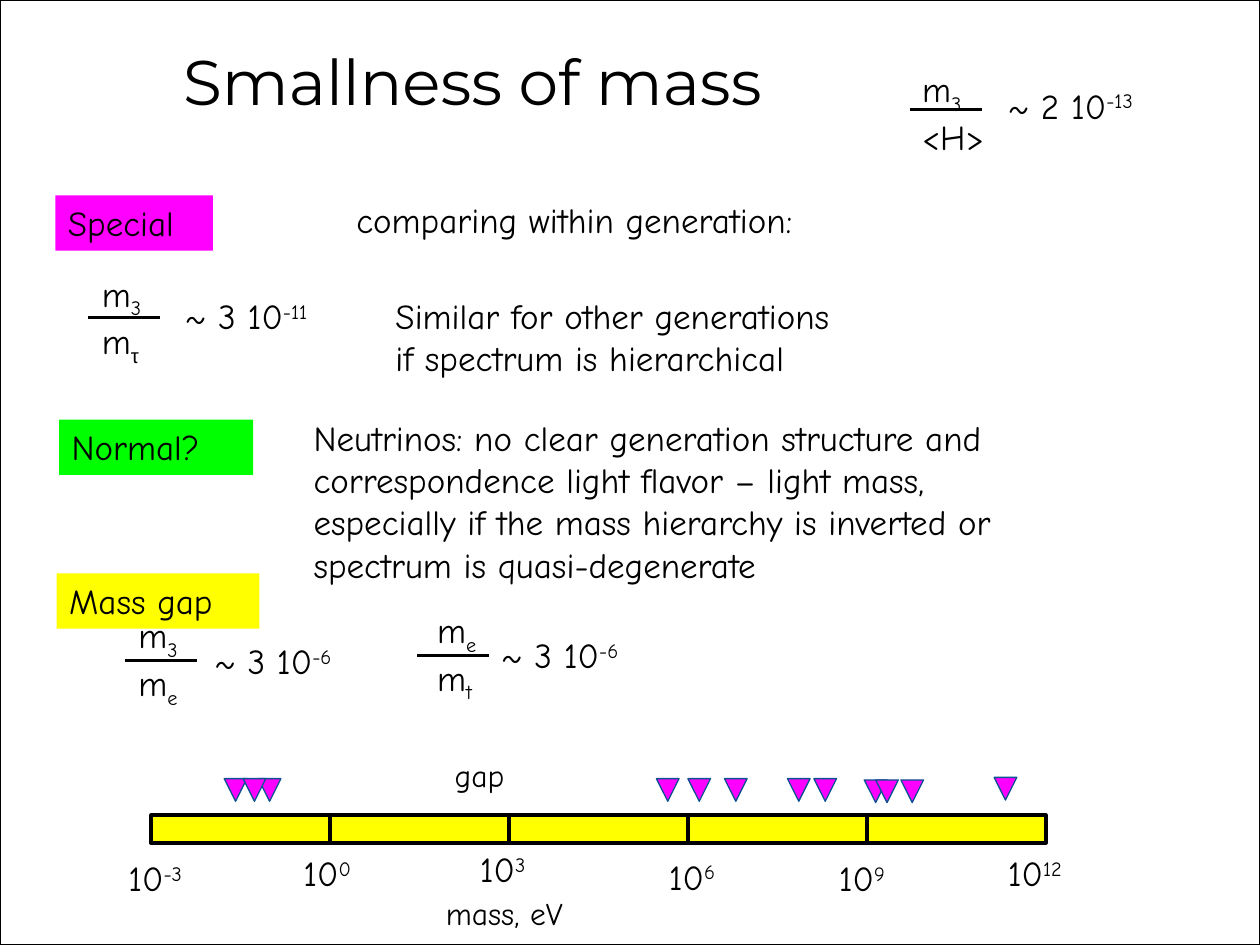
from typing import NamedTuple

from lxml.etree import SubElement
from pptx import Presentation
from pptx.dml.color import RGBColor
from pptx.enum.shapes import MSO_CONNECTOR, MSO_SHAPE
from pptx.enum.text import MSO_ANCHOR, PP_ALIGN
from pptx.oxml.ns import qn
from pptx.util import Emu, Inches, Pt

COLS, ROWS = 100, 75
WIDTH, HEIGHT = Inches(10), Inches(7.5)
BLACK, WHITE, MAGENTA, GREEN, YELLOW = "000000", "FFFFFF", "FF00FF", "00FF00", "FFFF00"
SCRIPTS = {"_": -25000, "^": 30000}


class Box(NamedTuple):
    """A place on the grid, in columns and rows."""
    x: float
    y: float
    w: float
    h: float


class Note(NamedTuple):
    """Lines of text, where _ starts a subscript and ^ a superscript."""
    box: Box
    lines: tuple
    size: int = 20


class Label(NamedTuple):
    """A heading on a coloured block."""
    box: Box
    word: str
    fill: str


class Ratio(NamedTuple):
    """A fraction with its bar and its approximate value."""
    terms: Box
    top: str
    bottom: str
    bar_x: float
    bar_y: float
    value_x: float
    value_y: float
    value: str


class Tick(NamedTuple):
    """A power of ten below the mass scale."""
    x: float
    y: float
    w: float
    power: str


LABELS = [
    Label(Box(4.4, 15.5, 12.5, 4.4), "Special", MAGENTA),
    Label(Box(4.7, 33.3, 15.4, 4.4), "Normal?", GREEN),
    Label(Box(4.5, 45.5, 16.1, 4.4), "Mass gap", YELLOW),
]
NOTES = [
    Note(Box(27.3, 15.3, 40.3, 4.4), ("comparing within generation:",)),
    Note(Box(30.4, 22.9, 41.8, 7.7),
         ("Similar for other generations", "if spectrum is hierarchical")),
    Note(Box(23.9, 32.6, 61.4, 14.5),
         ("Neutrinos: no clear generation structure and correspondence light flavor – "
          "light mass, especially if the mass hierarchy is inverted or spectrum is "
          "quasi-degenerate",)),
    Note(Box(35.1, 59.5, 7.4, 4), ("gap",), 18),
    Note(Box(34.4, 70.5, 18.8, 4), ("mass, eV",), 18),
]
RATIOS = [
    Ratio(Box(72.2, 4.9, 10.8, 7.7), "m_3", "<H>", 72.2, 8.7, 79, 6.2, "~ 2 10^-13"),
    Ratio(Box(7.1, 21.1, 5.8, 7.7), "m_3", "m_τ", 7, 25.2, 13.7, 22.9, "~ 3 10^-11"),
    Ratio(Box(10, 48.2, 5.8, 7.7), "m_3", "m_e", 9.9, 52.4, 15.1, 50.3, " ~ 3 10^-6"),
    Ratio(Box(33.7, 47.8, 5.8, 7.7), "m_e", "m_t", 33.1, 52, 38.8, 49.8, "~ 3 10^-6"),
]
TICKS = [
    Tick(9.2, 67.5, 7.6, "-3"), Tick(23.1, 67.1, 6.6, "0"), Tick(37.1, 66.8, 6.6, "3"),
    Tick(52.1, 67.4, 6.6, "6"), Tick(65.6, 67.5, 6.6, "9"), Tick(79, 67.1, 8.1, "12"),
]
SCALE = Box(12, 64.7, 14.2, 2.2)
MARKERS = {
    61.8: (20.5, 52.1, 17.8, 62.5, 54.6, 57.5, 64.6, 19.3),
    61.9: (68.6, 69.5, 71.5),
    61.7: (78.9,),
}


def rgb(value: str) -> RGBColor:
    """Turn a hex string into a colour."""
    return RGBColor.from_string(value)


def col(n: float) -> Emu:
    """Length of n grid columns."""
    return Emu(round(WIDTH * n / COLS))


def row(n: float) -> Emu:
    """Length of n grid rows."""
    return Emu(round(HEIGHT * n / ROWS))


def place(box: Box) -> tuple:
    """Left, top, width and height of a box."""
    return col(box.x), row(box.y), col(box.w), row(box.h)


def add_run(p, text: str, size: int, font: str, base: int = 0):
    """Add one run, raised or lowered by base."""
    r = p.add_run()
    r.text = text
    for key, value in {"size": Pt(size), "name": font}.items():
        setattr(r.font, key, value)
    r.font.color.rgb = rgb(BLACK)
    if base:
        r._r.get_or_add_rPr().set("baseline", str(base))
    return r


def write(tf, lines: tuple, size: int = 20) -> None:
    """Fill a text frame with left-aligned lines."""
    for key, value in {"word_wrap": True, "vertical_anchor": MSO_ANCHOR.TOP}.items():
        setattr(tf, key, value)
    for i, line in enumerate(lines):
        p = tf.add_paragraph() if i else tf.paragraphs[0]
        p.alignment = PP_ALIGN.LEFT
        mark = next((m for m in SCRIPTS if m in line), None)
        body, _, script = line.partition(mark) if mark else (line, "", "")
        add_run(p, body, size, "Comic Neue")
        if script:
            font = "Arial" if script == "τ" else "Comic Neue"
            add_run(p, script, size, font, SCRIPTS[mark])


def add_note(s, note: Note) -> None:
    """Draw a text box."""
    write(s.shapes.add_textbox(*place(note.box)).text_frame, note.lines, note.size)


def add_block(s, kind, box: Box, fill: str, line: str = "", width: float = 0.75):
    """Draw a filled preset shape, outlined if a line colour is given."""
    sp = s.shapes.add_shape(kind, *place(box))
    sp.shadow.inherit = False
    sp.fill.solid()
    sp.fill.fore_color.rgb = rgb(fill)
    if line:
        sp.line.color.rgb = rgb(line)
        sp.line.width = Pt(width)
    else:
        sp.line.fill.background()
    return sp


def add_title(s, text: str) -> None:
    """Draw the centred slide title."""
    tf = s.shapes.add_textbox(*place(Box(9.5, 2.2, 56, 8.4))).text_frame
    tf.word_wrap = False
    tf.vertical_anchor = MSO_ANCHOR.MIDDLE
    tf.paragraphs[0].alignment = PP_ALIGN.CENTER
    add_run(tf.paragraphs[0], text, 36, "Montserrat")


def add_ratio(s, q: Ratio) -> None:
    """Draw a fraction, its bar and its value."""
    add_note(s, Note(q.terms, (q.top, q.bottom)))
    y = row(q.bar_y)
    bar = s.shapes.add_connector(MSO_CONNECTOR.STRAIGHT, col(q.bar_x), y, col(q.bar_x + 5.7), y)
    bar.line.color.rgb = rgb(BLACK)
    bar.line.width = Pt(1.5)
    SubElement(bar._element.spPr, qn("a:effectLst"))
    add_note(s, Note(Box(q.value_x, q.value_y, 13.3, 4.4), (q.value,)))


def add_marker(s, x: float, y: float) -> None:
    """Draw a triangle pointing down at the scale."""
    sp = add_block(s, MSO_SHAPE.ISOSCELES_TRIANGLE, Box(x, y, 1.8, 1.8), MAGENTA, "0B5292")
    for key in ("flipH", "flipV"):
        sp._element.spPr.get_or_add_xfrm().set(key, "1")


def main() -> None:
    """Build and save the slide."""
    prs = Presentation()
    prs.slide_width, prs.slide_height = WIDTH, HEIGHT
    s = prs.slides.add_slide(prs.slide_layouts[6])
    add_block(s, MSO_SHAPE.RECTANGLE, Box(0, 0, COLS, ROWS), WHITE, BLACK)
    add_title(s, "Smallness of mass")
    for label in LABELS:
        sp = add_block(s, MSO_SHAPE.RECTANGLE, label.box, label.fill)
        write(sp.text_frame, (label.word,))
    for note in NOTES:
        add_note(s, note)
    for ratio in RATIOS:
        add_ratio(s, ratio)
    for i in range(len(TICKS) - 1):
        box = SCALE._replace(x=SCALE.x + i * SCALE.w)
        add_block(s, MSO_SHAPE.RECTANGLE, box, YELLOW, BLACK, 2.25)
    for tick in TICKS:
        add_note(s, Note(Box(tick.x, tick.y, tick.w, 4.4), (f"10^{tick.power}",)))
    for y, xs in MARKERS.items():
        for x in xs:
            add_marker(s, x, y)
    prs.save("out.pptx")


if __name__ == "__main__":
    main()
